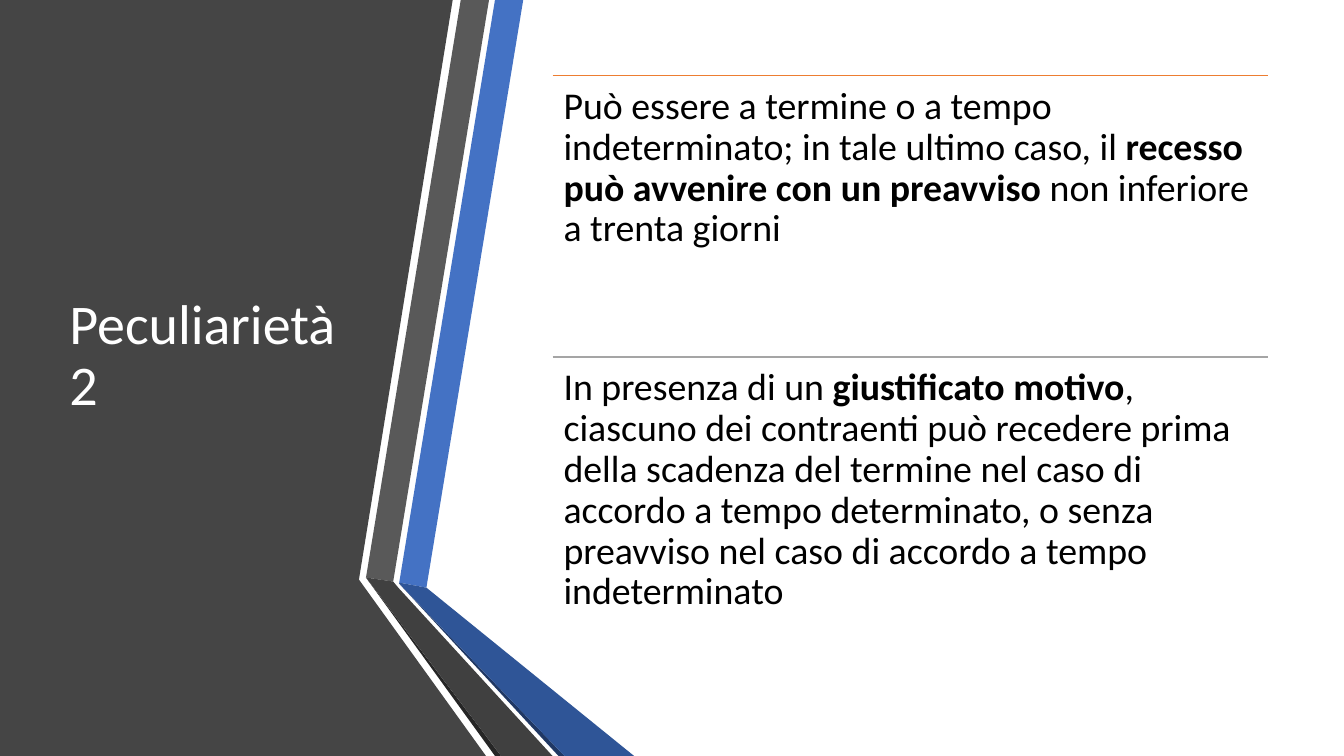
from collections import namedtuple

from pptx import Presentation
from pptx import util as u
from pptx.dml.color import RGBColor
from pptx.enum import shapes, text
from pptx.oxml.ns import qn
from lxml import etree

Box = namedtuple("Box", "left top width height")

WHITE = RGBColor(0xFF, 0xFF, 0xFF)
BLACK = RGBColor(0x00, 0x00, 0x00)
CHARCOAL = RGBColor(0x45, 0x45, 0x45)
BLUE = RGBColor(0x44, 0x72, 0xC4)
BLUE_DARK = RGBColor(0x2F, 0x55, 0x97)
NAVY = RGBColor(0x20, 0x38, 0x64)
GRAY = RGBColor(0x59, 0x59, 0x59)
GRAY_DARK = RGBColor(0x40, 0x40, 0x40)
GRAY_DEEP = RGBColor(0x26, 0x26, 0x26)
ORANGE = RGBColor(0xED, 0x7D, 0x31)
SILVER = RGBColor(0xA5, 0xA5, 0xA5)

FONT = "Calibri"
UNITS_PER_INCH = 100

PANEL = [(0, 0), (353, 0), (449, 0), (356, 575), (482, 750), (0, 750)]
RIBBONS = [
    (BLUE, [(396, 578), (423, 583), (519, 0), (491, 0)]),
    (GRAY, [(485, 0), (457, 0), (363, 573), (390, 577)]),
    (GRAY_DEEP, [(363, 573), (491, 750), (497, 750)]),
    (NAVY, [(396, 579), (554, 750), (560, 750)]),
    (BLUE_DARK, [(396, 579), (560, 750), (629, 750), (423, 583), (396, 578)]),
    (GRAY_DARK, [(548, 750), (395, 583), (390, 577), (363, 573), (497, 750)]),
]

CLAUSES = [
    (ORANGE, [
        ("Può essere a termine o a tempo indeterminato; in tale ultimo caso, il ", False),
        ("recesso può avvenire con un preavviso ", True),
        ("non inferiore a trenta giorni", False),
    ]),
    (SILVER, [
        ("In presenza di un ", False),
        ("giustificato motivo", True),
        (", ciascuno dei contraenti può recedere prima della scadenza del termine "
         "nel caso di accordo a tempo determinato, o senza preavviso nel caso di "
         "accordo a tempo indeterminato", False),
    ]),
]


def add_polygon(slide, box, points, color):
    builder = slide.shapes.build_freeform(*points[0], scale=u.Inches(1) / UNITS_PER_INCH)
    builder.add_line_segments(points[1:], close=True)
    shape = builder.convert_to_shape(u.Inches(box.left), u.Inches(box.top))
    shape.shadow.inherit = False
    shape.fill.solid()
    shape.fill.fore_color.rgb = color
    shape.line.fill.background()


def add_text(slide, box, runs, size, color, anchor, inset_x, inset_y):
    frame = slide.shapes.add_textbox(*map(u.Inches, box)).text_frame
    frame.word_wrap = True
    frame.vertical_anchor = anchor
    frame.margin_left = frame.margin_right = u.Inches(inset_x)
    frame.margin_top = frame.margin_bottom = u.Inches(inset_y)
    paragraph = frame.paragraphs[0]
    paragraph.line_spacing = 0.9
    paragraph.font.name = FONT
    paragraph.font.size = u.Pt(size)
    paragraph.font.color.rgb = color
    for words, bold in runs:
        run = paragraph.add_run()
        run.text = words
        if bold:
            run.font.bold = True


def add_rule(slide, box, color):
    left, top, right = map(u.Inches, (box.left, box.top, box.left + box.width))
    rule = slide.shapes.add_connector(shapes.MSO_CONNECTOR.STRAIGHT, left, top, right, top)
    rule.line.color.rgb = color
    rule.line.width = u.Pt(1)
    etree.SubElement(rule._element.spPr, qn("a:effectLst"))


def draw_backdrop(slide, box):
    add_polygon(slide, box, PANEL, CHARCOAL)
    for color, points in RIBBONS:
        add_polygon(slide, box, points, color)


def draw_title(slide, box):
    add_text(slide, box, [("Peculiarietà 2", False)], 40, WHITE,
             text.MSO_ANCHOR.MIDDLE, 0.1, 0.05)


def draw_clauses(slide, box):
    height = box.height / len(CLAUSES)
    for index, (color, runs) in enumerate(CLAUSES):
        row = Box(box.left, box.top + index * height, box.width, height)
        add_rule(slide, row, color)
        add_text(slide, row, runs, 27, BLACK, text.MSO_ANCHOR.TOP, 0.11, 0.11)


def main():
    presentation = Presentation()
    presentation.slide_width = u.Inches(13.33)
    presentation.slide_height = u.Inches(7.5)
    slide = presentation.slides.add_slide(presentation.slide_layouts[6])
    draw_backdrop(slide, Box(0, 0, 13.33, 7.5))
    draw_title(slide, Box(0.59, 0.75, 3.04, 5.58))
    draw_clauses(slide, Box(5.48, 0.75, 7.1, 5.58))
    presentation.save("out.pptx")


if __name__ == "__main__":
    main()
